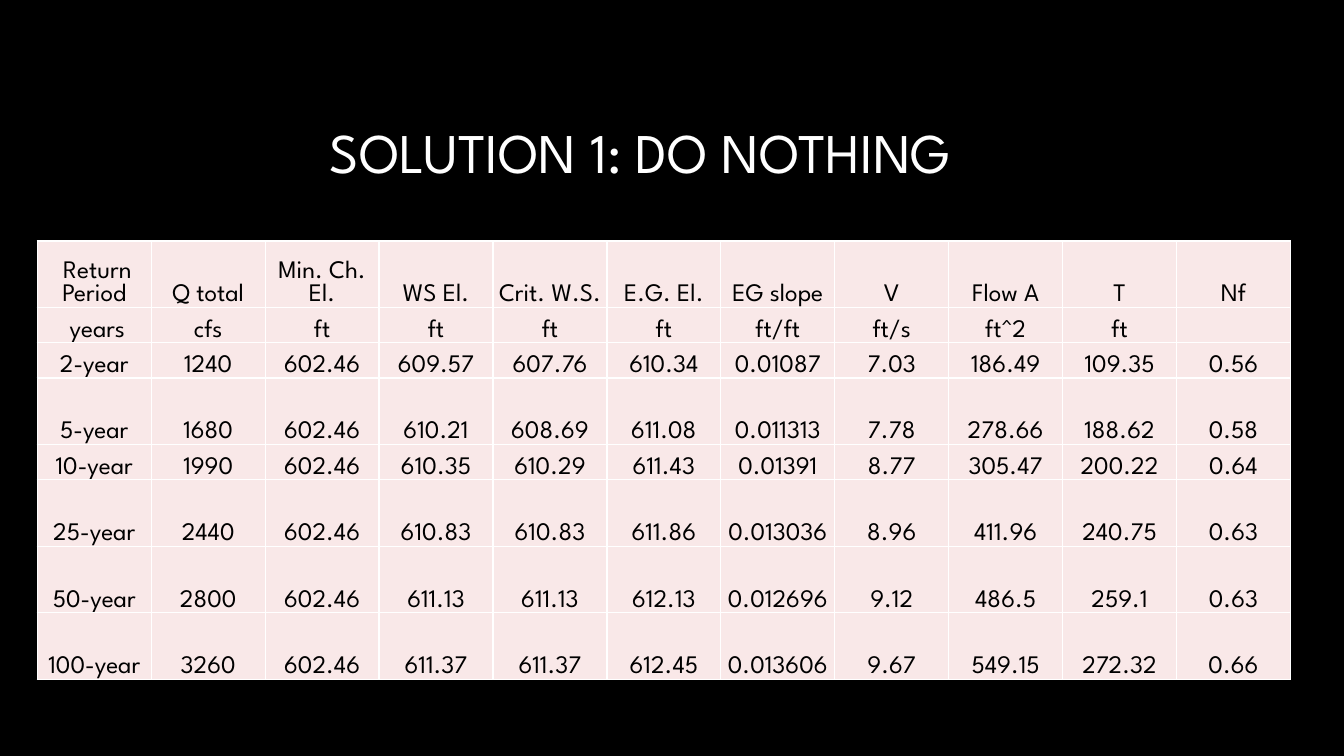
from pptx import Presentation
from pptx.dml.color import RGBColor
from pptx.enum import text
from pptx.oxml import parse_xml
from pptx.oxml.ns import nsdecls
from pptx.util import Inches, Pt

FONT = "League Spartan"
COLORS = {"background": "000000", "title": "FFFFFF", "cell": "F9E8E8",
          "cell_text": "000000", "border": "FFFFFF"}

COLUMN_WIDTH = 1.13
SHORT_ROW, TALL_ROW = 0.35, 0.66

# Row height and cell values
FLOW_ROWS = [
    (TALL_ROW, [" Return Period", "Q total", "Min. Ch. El.", "WS El.", "Crit. W.S.",
                "E.G. El.", "EG slope", "V", "Flow A", "T", "Nf"]),
    (SHORT_ROW, [" years", "cfs", "ft", "ft", "ft", "ft", "ft/ft", "ft/s", "ft^2", "ft", ""]),
    (SHORT_ROW, ["2-year", "1240", "602.46", "609.57", "607.76", "610.34",
                 "0.01087", "7.03", "186.49", "109.35", "0.56"]),
    (TALL_ROW, ["5-year", "1680", "602.46", "610.21", "608.69", "611.08",
                "0.011313", "7.78", "278.66", "188.62", "0.58"]),
    (SHORT_ROW, ["10-year", "1990", "602.46", "610.35", "610.29", "611.43",
                 "0.01391", "8.77", "305.47", "200.22", "0.64"]),
    (TALL_ROW, ["25-year", "2440", "602.46", "610.83", "610.83", "611.86",
                "0.013036", "8.96", "411.96", "240.75", "0.63"]),
    (TALL_ROW, ["50-year", "2800", "602.46", "611.13", "611.13", "612.13",
                "0.012696", "9.12", "486.5", "259.1", "0.63"]),
    (TALL_ROW, ["100-year", "3260", "602.46", "611.37", "611.37", "612.45",
                "0.013606", "9.67", "549.15", "272.32", "0.66"]),
]


def color(name):
    return RGBColor.from_string(COLORS[name])


def style_paragraph(para, size, color_name, alignment):
    para.alignment = alignment
    para.font.name = FONT
    para.font.size = Pt(size)
    para.font.color.rgb = color(color_name)


def add_borders(cell):
    properties = cell._tc.get_or_add_tcPr()
    for side in ("lnL", "lnR", "lnT", "lnB"):
        properties.append(parse_xml(
            f'<a:{side} {nsdecls("a")} w="{Pt(1)}"><a:solidFill>'
            f'<a:srgbClr val="{COLORS["border"]}"/></a:solidFill></a:{side}>'))


def fill_cell(cell, value):
    add_borders(cell)
    cell.fill.solid()
    cell.fill.fore_color.rgb = color("cell")
    cell.margin_left = cell.margin_right = cell.margin_top = Inches(0.01)
    cell.margin_bottom = 0
    cell.vertical_anchor = text.MSO_ANCHOR.BOTTOM
    cell.text = value
    style_paragraph(cell.text_frame.paragraphs[0], 18, "cell_text", text.PP_ALIGN.CENTER)


def set_title(page, wording):
    title = page.shapes.title
    title.left, title.top = Inches(3.17), Inches(0.83)
    title.width, title.height = Inches(9.42), Inches(1.42)
    title.text_frame.text = wording
    title.text_frame.vertical_anchor = text.MSO_ANCHOR.MIDDLE
    para = title.text_frame.paragraphs[0]
    para.line_spacing = 0.9
    style_paragraph(para, 40, "title", text.PP_ALIGN.LEFT)


def add_flow_table(page):
    column_count = len(FLOW_ROWS[0][1])
    height = sum(row_height for row_height, _ in FLOW_ROWS)
    table = page.shapes.add_table(
        len(FLOW_ROWS), column_count, Inches(0.37), Inches(2.39),
        Inches(COLUMN_WIDTH * column_count), Inches(height)).table
    for column in table.columns:
        column.width = Inches(COLUMN_WIDTH)
    for row, (row_height, values) in zip(table.rows, FLOW_ROWS):
        row.height = Inches(row_height)
        for cell, value in zip(row.cells, values):
            fill_cell(cell, value)


def main():
    deck = Presentation()
    deck.slide_width, deck.slide_height = Inches(13.33), Inches(7.5)
    page = deck.slides.add_slide(deck.slide_layouts[5])

    # Background
    page.background.fill.solid()
    page.background.fill.fore_color.rgb = color("background")

    # Title and table
    set_title(page, "SOLUTION 1: DO NOTHING")
    add_flow_table(page)

    deck.save("out.pptx")


if __name__ == "__main__":
    main()
